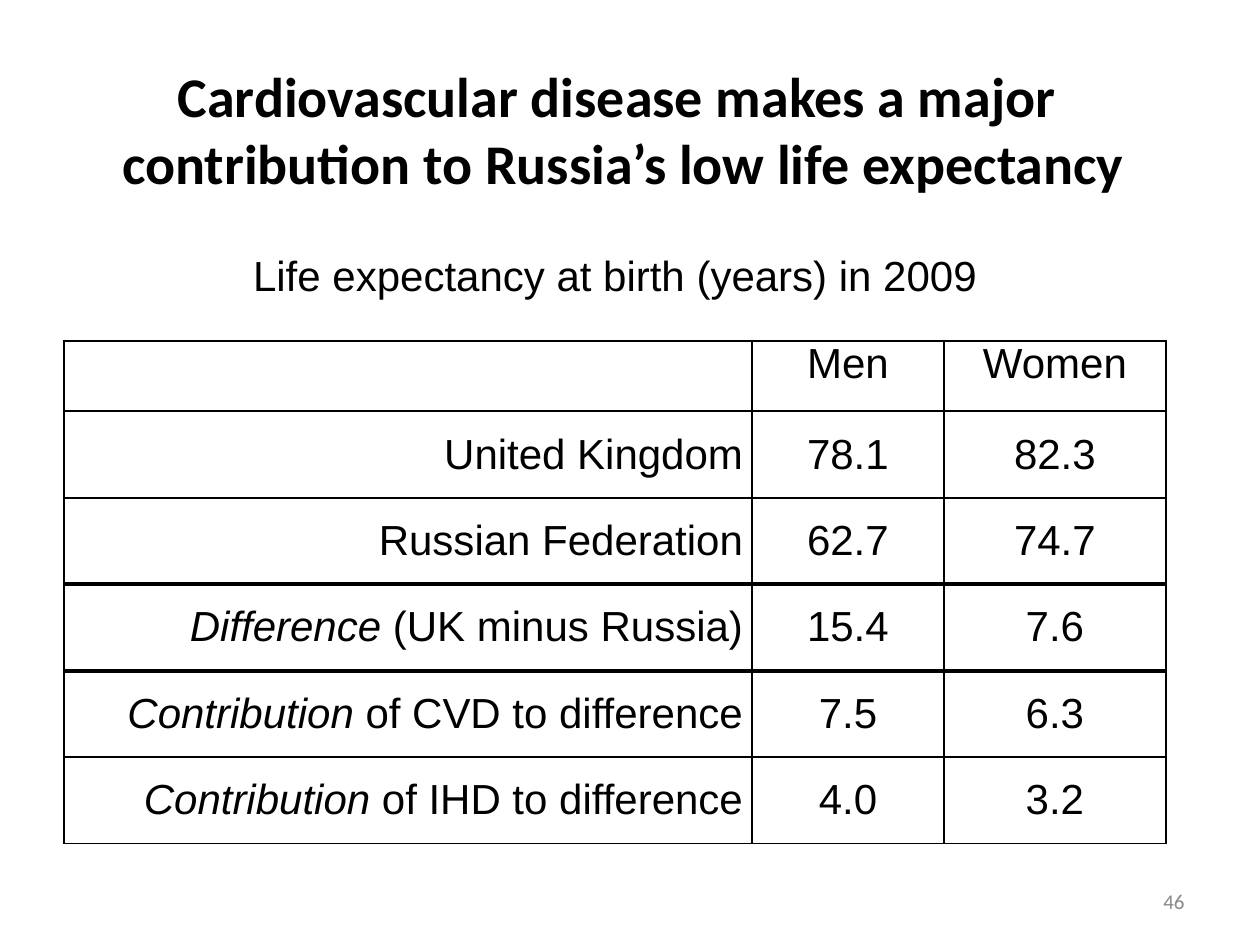
import lxml.etree
import pptx
import pptx.dml.color
import pptx.enum.text
import pptx.oxml.ns
import pptx.util

EMU_PER_PX = 914400 // 126
COLORS = {"background": "FFFFFF", "text": "000000", "border": "000000", "number": "898989"}
ALIGN = pptx.enum.text.PP_ALIGN
ANCHOR = pptx.enum.text.MSO_ANCHOR

TITLE_LINES = [
    "Cardiovascular disease makes a major ",
    "contribution to Russia’s low life expectancy",
]
CAPTION = "Life expectancy at birth (years) in 2009"
# Each row: italic lead of the label, rest of the label, men, women
ROWS = [
    ("", "", "Men", "Women"),
    ("", "United Kingdom", "78.1", "82.3"),
    ("", "Russian Federation", "62.7", "74.7"),
    ("Difference", " (UK minus Russia)", "15.4", "7.6"),
    ("Contribution", " of CVD to difference", "7.5", "6.3"),
    ("Contribution", " of IHD to difference", "4.0", "3.2"),
]
COLUMN_WIDTHS = [688, 192, 222]
ROW_HEIGHTS = [87, 70, 87, 86, 87, 86, 87]
DIFFERENCE_ROW = 4


def px(length):
    return pptx.util.Emu(length * EMU_PER_PX)


def rgb(name):
    return pptx.dml.color.RGBColor.from_string(COLORS[name])


def add_text(paragraph, text, size=24, font="Arial", color="text",
             bold=False, italic=False, align=ALIGN.CENTER):
    paragraph.alignment = align
    run = paragraph.add_run()
    run.text = text
    run.font.size = pptx.util.Pt(size)
    run.font.name = font
    run.font.bold = bold
    run.font.italic = italic
    run.font.color.rgb = rgb(color)


def place(shape, left, top, width, height):
    shape.left, shape.top = px(left), px(top)
    shape.width, shape.height = px(width), px(height)


def set_borders(cell, widths):
    """Draw the borders; widths maps L, R, T, B in that order to points, 0 for none."""
    properties = cell._tc.get_or_add_tcPr()
    qn = pptx.oxml.ns.qn
    for side, width in widths.items():
        line = lxml.etree.SubElement(properties, qn(f"a:ln{side}"))
        line.set("w", str(pptx.util.Pt(width)))
        if width:
            fill = lxml.etree.SubElement(line, qn("a:solidFill"))
            lxml.etree.SubElement(fill, qn("a:srgbClr")).set("val", COLORS["border"])
        else:
            lxml.etree.SubElement(line, qn("a:noFill"))


def border_widths(row):
    """The caption row is open on three sides; the difference row has thick edges."""
    if row == 0:
        return {"L": 0, "R": 0, "T": 0, "B": 1}
    top = 2.25 if row in (DIFFERENCE_ROW, DIFFERENCE_ROW + 1) else 1
    bottom = 2.25 if row in (DIFFERENCE_ROW - 1, DIFFERENCE_ROW) else 1
    return {"L": 1, "R": 1, "T": top, "B": bottom}


def format_cell(cell, row):
    cell.margin_left = cell.margin_right = px(9)
    cell.margin_top = cell.margin_bottom = 0
    cell.vertical_anchor = ANCHOR.TOP if row < 2 else ANCHOR.MIDDLE
    set_borders(cell, border_widths(row))
    cell.fill.background()


def add_title(slide):
    title = slide.shapes.title
    place(title, 105, 55, 1037, 149)
    frame = title.text_frame
    frame.word_wrap = False
    frame.vertical_anchor = ANCHOR.TOP
    for index, line in enumerate(TITLE_LINES):
        paragraph = frame.add_paragraph() if index else frame.paragraphs[0]
        add_text(paragraph, line, size=32, font="Calibri", bold=True)


def add_life_expectancy_table(slide):
    frame = slide.shapes.add_table(len(ROW_HEIGHTS), len(COLUMN_WIDTHS), px(64), px(254),
                                   px(sum(COLUMN_WIDTHS)), px(sum(ROW_HEIGHTS)))
    table = frame.table
    table.first_row = table.horz_banding = False
    for column, width in zip(table.columns, COLUMN_WIDTHS):
        column.width = px(width)
    for index, height in enumerate(ROW_HEIGHTS):
        table.rows[index].height = px(height)
        for cell in table.rows[index].cells:
            format_cell(cell, index)

    caption = table.cell(0, 0)
    caption.merge(table.cell(0, 2))
    add_text(caption.text_frame.paragraphs[0], CAPTION)
    for row, (lead, label, *values) in enumerate(ROWS, start=1):
        paragraph = table.cell(row, 0).text_frame.paragraphs[0]
        if lead:
            add_text(paragraph, lead, italic=True, align=ALIGN.RIGHT)
        if label:
            add_text(paragraph, label, align=ALIGN.RIGHT)
        for column, value in enumerate(values, start=1):
            add_text(table.cell(row, column).text_frame.paragraphs[0], value)


def add_slide_number(slide):
    box = slide.shapes.add_textbox(px(903), px(876), px(294), px(50))
    box.text_frame.word_wrap = True
    box.text_frame.vertical_anchor = ANCHOR.MIDDLE
    add_text(box.text_frame.paragraphs[0], "46", size=12, font="Calibri",
             color="number", align=ALIGN.RIGHT)


def main():
    presentation = pptx.Presentation()
    presentation.slide_width, presentation.slide_height = px(1260), px(945)
    slide = presentation.slides.add_slide(presentation.slide_layouts[5])
    slide.background.fill.solid()
    slide.background.fill.fore_color.rgb = rgb("background")
    add_life_expectancy_table(slide)
    add_slide_number(slide)
    add_title(slide)
    presentation.save("out.pptx")


if __name__ == "__main__":
    main()
